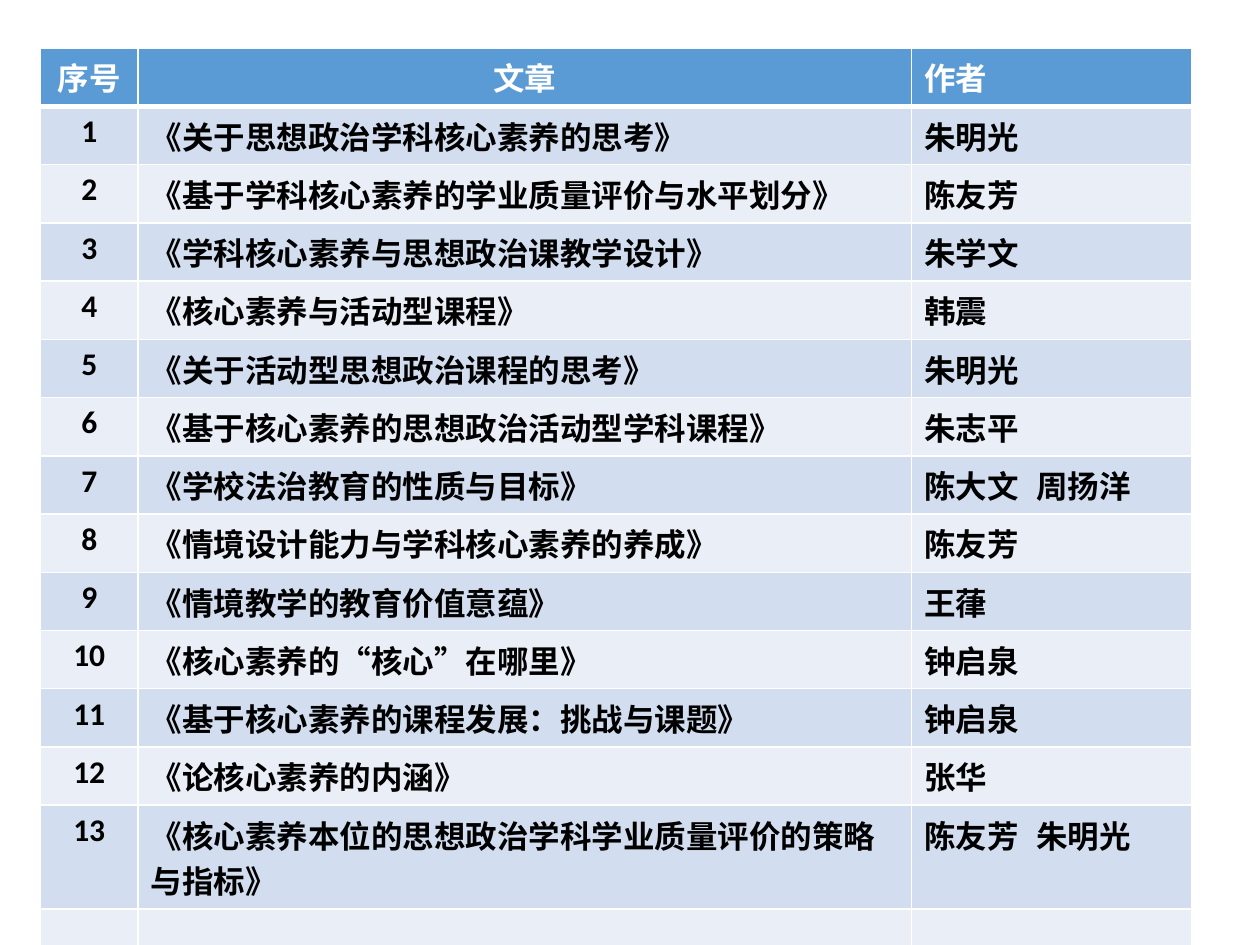
from dataclasses import dataclass

from lxml import etree
from pptx import Presentation
from pptx import util as u
from pptx.dml import color
from pptx.enum import text
from pptx.oxml import ns


@dataclass(frozen=True)
class Theme:
    font: str = "Calibri"
    size: int = 18
    head: str = "5B9BD5"
    odd: str = "D2DEEF"
    even: str = "EAEFF7"
    line: str = "FFFFFF"
    light: str = "FFFFFF"
    dark: str = "000000"


THEME = Theme()
WIDTHS = (56, 442, 160)
ROW, TALL = 33, 52
HEADS = ("序号", "文章", "作者")
WORKS = (
    ("《关于思想政治学科核心素养的思考》", "朱明光"),
    ("《基于学科核心素养的学业质量评价与水平划分》", "陈友芳"),
    ("《学科核心素养与思想政治课教学设计》", "朱学文"),
    ("《核心素养与活动型课程》", "韩震"),
    ("《关于活动型思想政治课程的思考》", "朱明光"),
    ("《基于核心素养的思想政治活动型学科课程》", "朱志平"),
    ("《学校法治教育的性质与目标》", "陈大文\t周扬洋"),
    ("《情境设计能力与学科核心素养的养成》", "陈友芳"),
    ("《情境教学的教育价值意蕴》", "王葎"),
    ("《核心素养的“核心”在哪里》", "钟启泉"),
    ("《基于核心素养的课程发展：挑战与课题》", "钟启泉"),
    ("《论核心素养的内涵》", "张华"),
    ("《核心素养本位的思想政治学科学业质量评价的策略与指标》", "陈友芳\t朱明光"),
)


def write(frame, words, ink=THEME.dark, center=False, tab=64):
    """Put words in the frame; tab is where a second author starts."""
    para = frame.paragraphs[0]
    para.alignment = text.PP_ALIGN.CENTER if center else text.PP_ALIGN.LEFT
    if "\t" in words:
        stops = etree.SubElement(para._p.get_or_add_pPr(), ns.qn("a:tabLst"))
        etree.SubElement(stops, ns.qn("a:tab"), pos=str(u.Pt(tab)), algn="l")
    run = para.add_run()
    run.text = words
    font = run.font
    font.name, font.size, font.bold = THEME.font, u.Pt(THEME.size), True
    font.color.rgb = color.RGBColor.from_string(ink)


def edge(cell, **widths):
    """Draw cell borders, given as side=points in the order L, R, T, B."""
    props = cell._tc.get_or_add_tcPr()
    for side, width in widths.items():
        line = etree.SubElement(props, ns.qn(f"a:ln{side}"), w=str(u.Pt(width)))
        fill = etree.SubElement(line, ns.qn("a:solidFill"))
        etree.SubElement(fill, ns.qn("a:srgbClr"), val=THEME.line)


def paint(cell, tone):
    cell.fill.solid()
    cell.fill.fore_color.rgb = color.RGBColor.from_string(tone)


def add_list(slide):
    rows = [HEADS]
    rows += [(str(n), *work) for n, work in enumerate(WORKS, 1)]
    rows.append(("", "", ""))
    highs = [ROW] * len(rows)
    highs[len(WORKS)] = TALL
    frame = slide.shapes.add_table(
        len(rows), len(WIDTHS), u.Pt(23), u.Pt(27.5),
        u.Pt(sum(WIDTHS)), u.Pt(sum(highs)))
    table = frame.table
    for col, width in zip(table.columns, WIDTHS):
        col.width = u.Pt(width)
    for r, (row, high) in enumerate(zip(rows, highs)):
        table.rows[r].height = u.Pt(high)
        top = r == 0
        tone = THEME.head if top else THEME.odd if r % 2 else THEME.even
        for c, words in enumerate(row):
            cell = table.cell(r, c)
            edge(cell, L=1, R=1, T=3 if r == 1 else 1, B=3 if top else 1)
            paint(cell, tone)
            if words:
                write(cell.text_frame, words,
                      ink=THEME.light if top else THEME.dark,
                      center=c == 0 or (top and c == 1))


def main():
    deck = Presentation()
    deck.slide_width, deck.slide_height = u.Pt(720), u.Pt(540)
    slide = deck.slides.add_slide(deck.slide_layouts[6])
    add_list(slide)
    deck.save("out.pptx")


if __name__ == "__main__":
    main()
